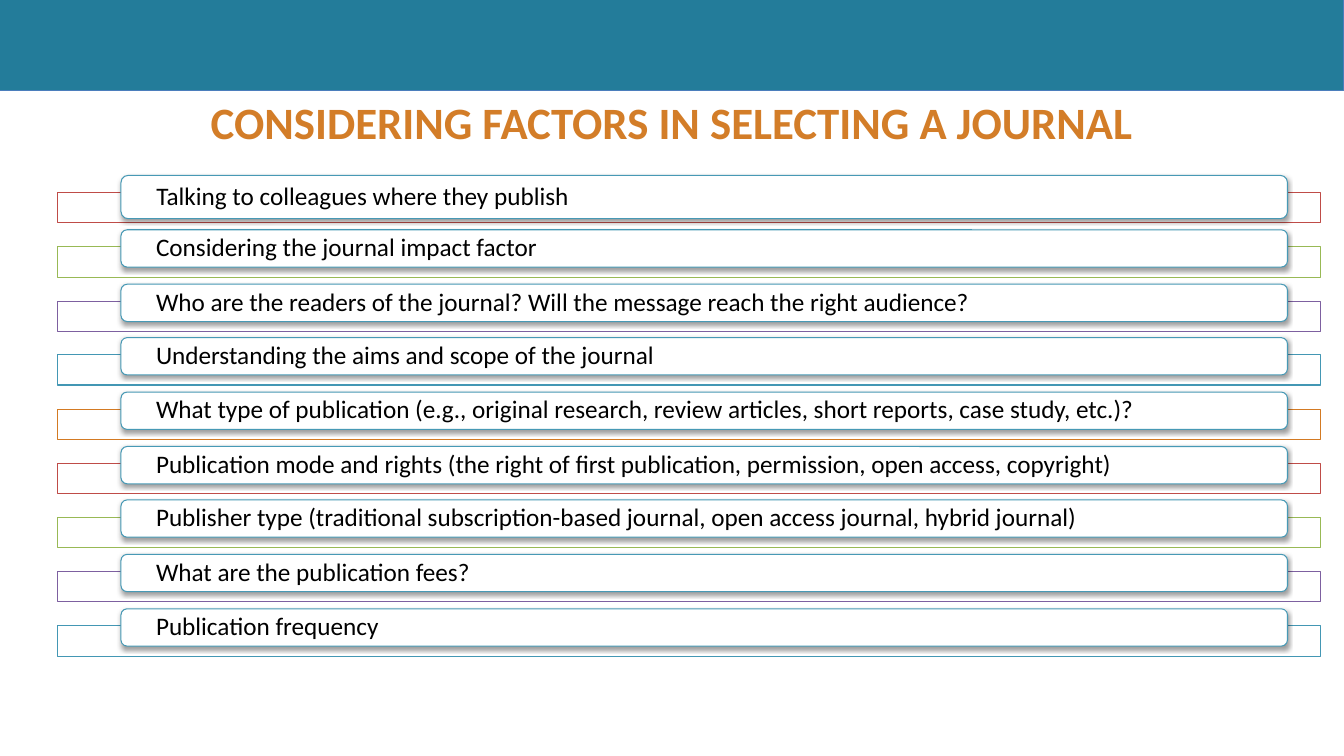
from lxml.etree import SubElement
from pptx import Presentation
from pptx.dml.color import RGBColor
from pptx.enum.shapes import MSO_SHAPE as Preset
from pptx.enum.text import MSO_ANCHOR as Anchor, PP_ALIGN as Align
from pptx.oxml.ns import qn
from pptx.util import Emu, Pt

PX = 9144  # 100 px to the inch
SLIDE_W, SLIDE_H = 1333, 750
TITLE_ONLY = 5

# Rows: the bars are spread evenly between the first and last top
FIRST_BAR, LAST_BAR = 191, 621
BAR_LEFT, BAR_W, BAR_H = 57, 1253, 30
CARD_LEFT, CARD_W, CARD_RISE = 120, 1157, 17
FIRST_CARD_H, CARD_H = 43, 37

BAR_COLOURS = ["BF4C48", "98B955", "7D60A0", "4397B4", "D37A23"]
FACTORS = [
    "Talking to colleagues where they publish",
    "Considering the journal impact factor",
    "Who are the readers of the journal? Will the message reach the right audience?",
    "Understanding the aims and scope of the journal",
    "What type of publication (e.g., original research, review articles, short reports, case study, etc.)?",
    "Publication mode and rights (the right of first publication, permission, open access, copyright)",
    "Publisher type (traditional subscription-based journal, open access journal, hybrid journal)",
    "What are the publication fees?",
    "Publication frequency",
]


def px(length):
    return Emu(length * PX)


def colour(hex_code):
    return RGBColor.from_string(hex_code)


def set_all(target, values):
    for name, value in values.items():
        setattr(target, name, value)


def add_panel(slide, preset, left, top, width, height, fill, line):
    panel = slide.shapes.add_shape(preset, px(left), px(top), px(width), px(height))
    panel.shadow.inherit = False
    panel.fill.solid()
    panel.fill.fore_color.rgb = colour(fill)
    panel.line.color.rgb = colour(line)
    panel.line.width = Pt(0.75)
    return panel


def set_alpha(parent, percent):
    SubElement(parent, qn("a:alpha"), val=str(percent * 1000))


def add_drop_shadow(panel):
    effects = panel._element.spPr.find(qn("a:effectLst"))
    shadow = SubElement(effects, qn("a:outerShdw"), blurRad=str(Pt(3.1)),
                        dist=str(Pt(1.6)), dir="5400000", rotWithShape="0")
    set_alpha(SubElement(shadow, qn("a:srgbClr"), val="000000"), 38)


def write_text(shape, text, size, hex_code, margins, align, bold=False):
    frame = shape.text_frame
    frame.text = text
    left, top, right, bottom = map(px, margins)
    set_all(frame, {"word_wrap": True, "vertical_anchor": Anchor.MIDDLE,
                    "margin_left": left, "margin_top": top,
                    "margin_right": right, "margin_bottom": bottom})
    paragraph = frame.paragraphs[0]
    paragraph.alignment = align
    font = paragraph.runs[0].font
    set_all(font, {"name": "Calibri", "size": Pt(size), "bold": bold})
    font.color.rgb = colour(hex_code)
    return paragraph


def add_title(slide, text):
    title = slide.shapes.title
    set_all(title, {"left": px(0), "top": px(86), "width": px(SLIDE_W), "height": px(65)})
    write_text(title, text, 32, "D37D28", (10, 5, 10, 0), Align.CENTER, bold=True)


def add_bar(slide, top, line):
    bar = add_panel(slide, Preset.RECTANGLE, BAR_LEFT, top, BAR_W, BAR_H, "FFFFFF", line)
    set_alpha(bar._element.spPr.find(qn("a:solidFill"))[0], 90)


def add_card(slide, top, height, factor):
    card = add_panel(slide, Preset.ROUNDED_RECTANGLE, CARD_LEFT, top, CARD_W, height,
                     "FFFFFF", "4799B5")
    add_drop_shadow(card)
    paragraph = write_text(card, factor, 18, "000000", (33, 0, 33, 0), Align.LEFT)
    paragraph.line_spacing = 0.9


def main():
    deck = Presentation()
    set_all(deck, {"slide_width": px(SLIDE_W), "slide_height": px(SLIDE_H)})
    slide = deck.slides.add_slide(deck.slide_layouts[TITLE_ONLY])

    # Header band and title
    add_panel(slide, Preset.RECTANGLE, 0, 0, SLIDE_W, 90, "237C9A", "4B7EBC")
    add_title(slide, "CONSIDERING FACTORS IN SELECTING A JOURNAL")

    # One bar with a card on it for each factor
    for row, factor in enumerate(FACTORS):
        top = FIRST_BAR + round((LAST_BAR - FIRST_BAR) * row / (len(FACTORS) - 1))
        add_bar(slide, top, BAR_COLOURS[row % len(BAR_COLOURS)])
        add_card(slide, top - CARD_RISE, CARD_H if row else FIRST_CARD_H, factor)

    deck.save("out.pptx")


if __name__ == "__main__":
    main()
